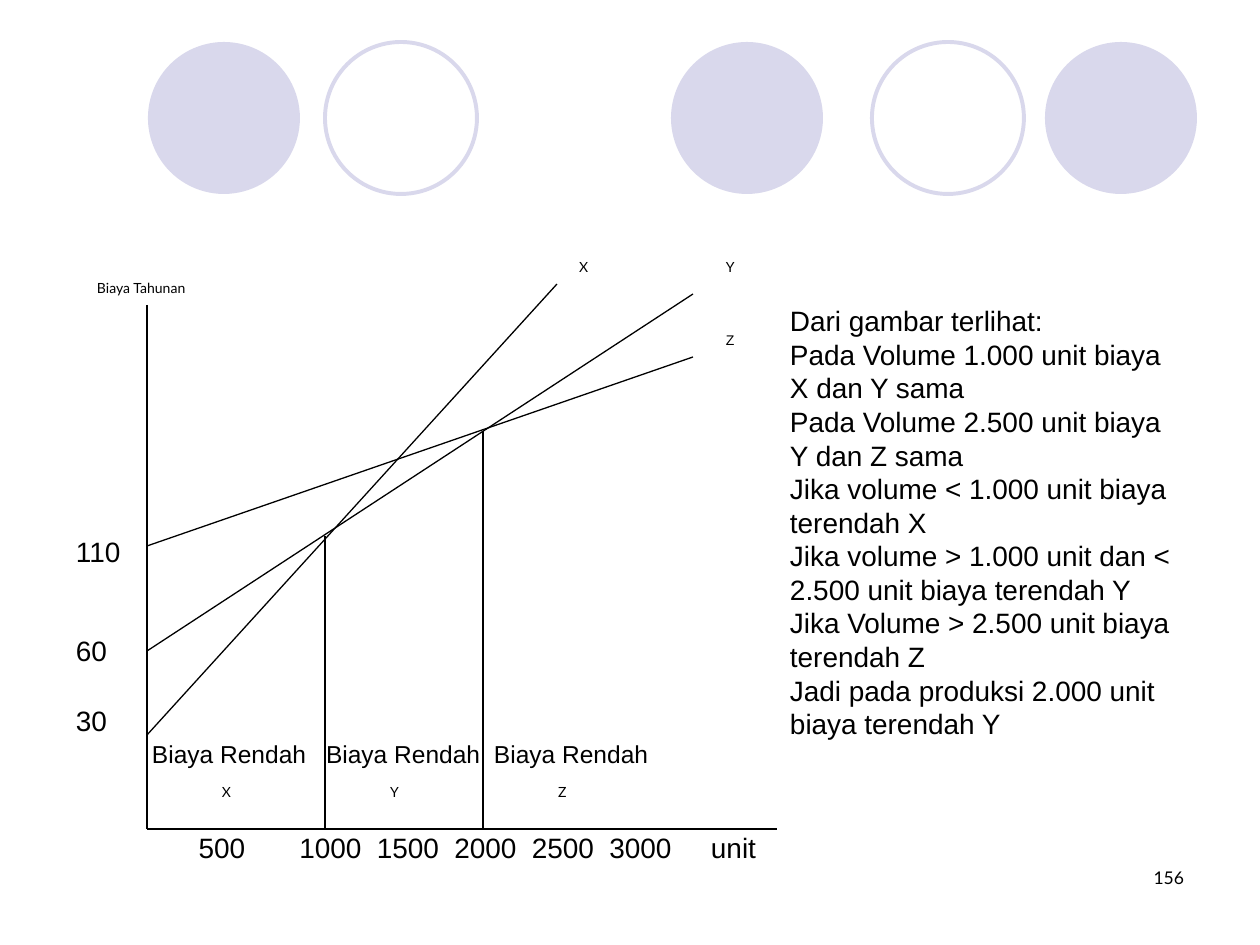
"""Build the slide comparing the yearly cost lines of X, Y and Z."""
from pptx import Presentation
from pptx import util as u
from pptx.dml.color import RGBColor
from pptx.enum import shapes, text
from pptx.oxml.ns import qn
from lxml import etree

PX = 914400 / 126
INK, PALE = "000000", "D9D8EC"


def emu(*nums):
    return [u.Emu(round(n * PX)) for n in nums]


def write(words, x, mid, w=180, h=40, size=16, font="Arial", align="LEFT"):
    box = slide.shapes.add_textbox(*emu(x, mid - h / 2, w, h))
    frame = box.text_frame
    frame.word_wrap = True
    frame.vertical_anchor = text.MSO_ANCHOR.MIDDLE
    frame.margin_left = frame.margin_right = 0
    frame.margin_top = frame.margin_bottom = 0
    frame.text = words
    for para in frame.paragraphs:
        para.alignment = text.PP_ALIGN[align]
        para.font.size = u.Pt(size)
        para.font.name = font
        para.font.color.rgb = RGBColor.from_string(INK)


deck = Presentation()
deck.slide_width, deck.slide_height = emu(1260, 945)
slide = deck.slides.add_slide(deck.slide_layouts[6])

for x, solid in [(148, True), (325, False), (671, True), (872, False), (1045, True)]:
    disc = slide.shapes.add_shape(shapes.MSO_SHAPE.OVAL, *emu(x, 42, 152, 152))
    disc.shadow.inherit = False
    if solid:
        disc.fill.solid()
        disc.fill.fore_color.rgb = RGBColor.from_string(PALE)
        disc.line.fill.background()
    else:
        disc.fill.background()
        disc.line.color.rgb = RGBColor.from_string(PALE)
        disc.line.width = u.Pt(2.25)

left, base = 147, 829
lines = [
    (left, 305, left, base),
    (left, base, 777, base),
    (left, 735, 557, 284),
    (left, 651, 693, 294),
    (left, 546, 693, 357),
    (325, 536, 325, base),
    (483, 431, 483, base),
]
for ends in lines:
    line = slide.shapes.add_connector(shapes.MSO_CONNECTOR.STRAIGHT, *emu(*ends))
    line.line.color.rgb = RGBColor.from_string(INK)
    line.line.width = u.Pt(0.75)
    etree.SubElement(line._element.spPr, qn("a:effectLst"))

for cost, mid in [("110", 551), ("60", 650), ("30", 720)]:
    write(cost, 76, mid, w=60)

for i in range(6):
    write(str(500 * (i + 1)), 184 + 78 * i if i == 0 else 215 + 77.5 * i, 847, w=76, align="CENTER")
write("unit", 711, 847, w=60)

for i, (name, x) in enumerate(zip("XYZ", (152, 326, 494))):
    write("Biaya Rendah", x, 754, w=170, size=14)
    write(name, 222 + 168 * i, 792, w=30, size=8, font="Lato")

for name, x, mid, font in [("X", 579, 267, "Lato"), ("Y", 726, 267, "Lato"), ("Z", 726, 340, "Arial")]:
    write(name, x, mid, w=30, size=8, font=font)
write("Biaya Tahunan", 97, 288, size=8, font="Lato")

notes = [
    "Dari gambar terlihat:",
    "Pada Volume 1.000 unit biaya X dan Y sama",
    "Pada Volume 2.500 unit biaya Y dan Z sama",
    "Jika volume < 1.000 unit biaya terendah X",
    "Jika volume > 1.000 unit dan < 2.500 unit biaya terendah Y",
    "Jika Volume > 2.500 unit biaya terendah Z",
    "Jadi pada produksi 2.000 unit biaya terendah Y",
]
write("\n".join(notes), 790, 522, w=384, h=440)
write("156", 904, 878, w=280, size=10, font="Lato", align="RIGHT")

deck.save("out.pptx")
